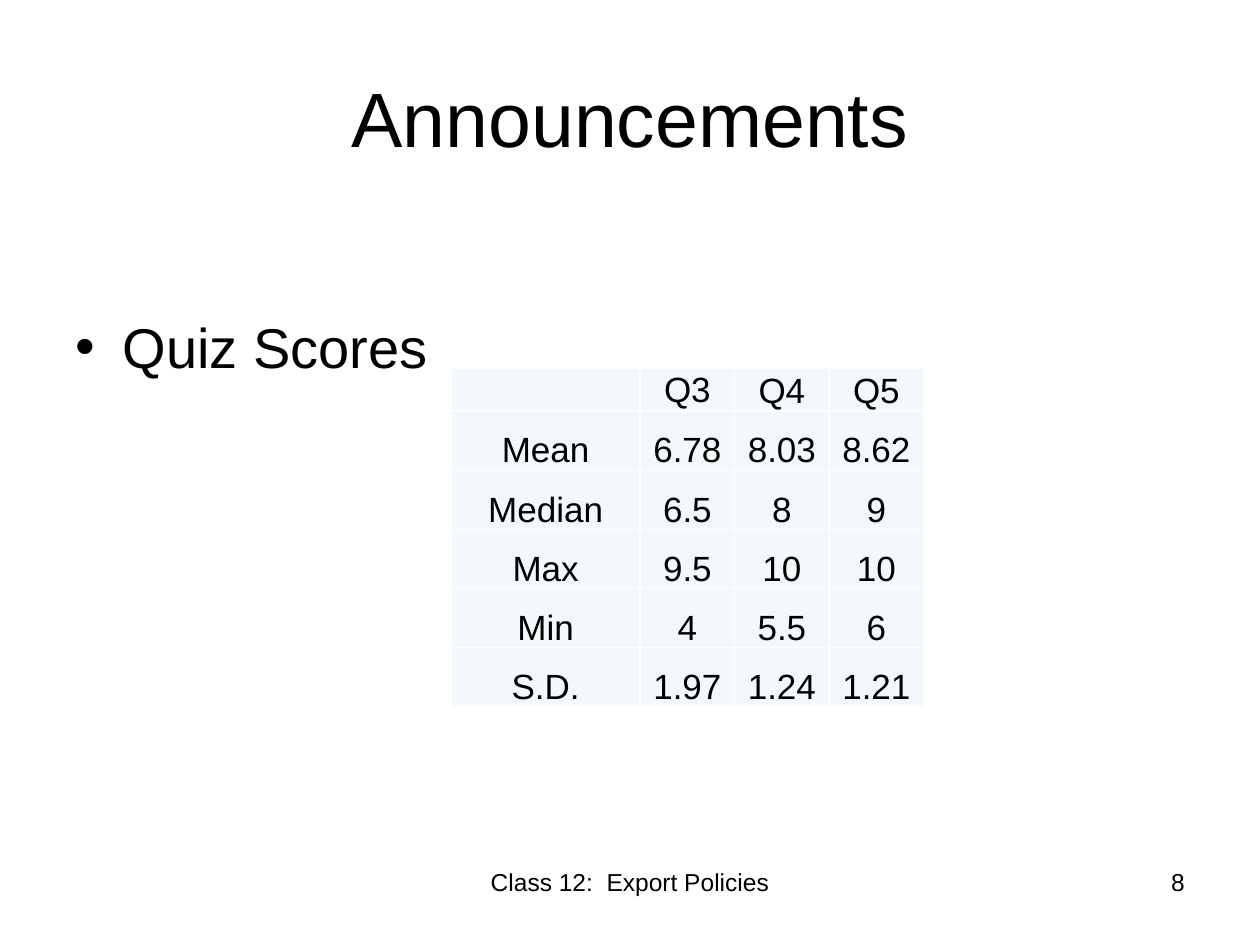
from dataclasses import dataclass

from lxml.etree import SubElement
from pptx import Presentation
from pptx.dml.color import RGBColor
from pptx.enum.text import MSO_ANCHOR as ANCHOR, PP_ALIGN as ALIGN
from pptx.oxml.ns import qn
from pptx.util import Pt

BLACK = RGBColor(0x00, 0x00, 0x00)
WHITE = RGBColor(0xFF, 0xFF, 0xFF)
CELL_FILL = RGBColor(0xF3, 0xF9, 0xFA)
FONT = "Arial"
CELL_SIZE = 20
CELL_MARGINS = {"margin_left": Pt(0.72), "margin_right": Pt(0.72),
                "margin_top": Pt(0.72), "margin_bottom": Pt(0)}

SCORES = [
    ("", "Q3", "Q4", "Q5"),
    ("Mean", "6.78", "8.03", "8.62"),
    ("Median", "6.5", "8", "9"),
    ("Max", "9.5", "10", "10"),
    ("Min", "4", "5.5", "6"),
    ("S.D.", "1.97", "1.24", "1.21"),
]
COL_WIDTHS = [108, 54, 54, 54]
ROW_HEIGHTS = [23.8] + [33.8] * 5


@dataclass
class TextItem:
    text: str
    left: float
    top: float
    width: float
    height: float
    size: float
    align: ALIGN
    anchor: ANCHOR = ANCHOR.TOP
    top_inset: float = 3.6
    bullet: bool = False


TITLE = TextItem("Announcements", 36, 21.6, 648, 90, 44, ALIGN.CENTER, ANCHOR.MIDDLE)
TEXTS = [
    TextItem("Quiz Scores", 36, 126, 648, 356.4, 32, ALIGN.LEFT,
             top_inset=52.4, bullet=True),
    TextItem("Class 12:  Export Policies", 246, 492, 228, 37.5, 14, ALIGN.CENTER),
    TextItem("8", 516, 492, 168, 37.5, 14, ALIGN.RIGHT),
]


def set_all(obj, values: dict) -> None:
    for name, value in values.items():
        setattr(obj, name, value)


def write(tf, text: str, size: float, align: ALIGN):
    p = tf.paragraphs[0]
    p.alignment = align
    r = p.add_run()
    r.text = text
    set_all(r.font, {"name": FONT, "size": Pt(size)})
    r.font.color.rgb = BLACK
    return p


def add_bullet(p, indent: float) -> None:
    pPr = p._p.get_or_add_pPr()
    pPr.set("marL", str(Pt(indent)))
    pPr.set("indent", str(-Pt(indent)))
    SubElement(pPr, qn("a:buFont"), typeface=FONT)
    SubElement(pPr, qn("a:buChar"), char="•")


def fill_text(sp, item: TextItem) -> None:
    set_all(sp, {"left": Pt(item.left), "top": Pt(item.top),
                 "width": Pt(item.width), "height": Pt(item.height)})
    tf = sp.text_frame
    set_all(tf, {"word_wrap": True, "vertical_anchor": item.anchor,
                 "margin_top": Pt(item.top_inset)})
    p = write(tf, item.text, item.size, item.align)
    if item.bullet:
        add_bullet(p, 27)


def add_borders(cell) -> None:
    tcPr = cell._tc.get_or_add_tcPr()
    for i, side in enumerate(("a:lnL", "a:lnR", "a:lnT", "a:lnB")):
        ln = tcPr.makeelement(qn(side), {"w": str(Pt(1))})
        fill = SubElement(ln, qn("a:solidFill"))
        SubElement(fill, qn("a:srgbClr"), val=str(WHITE))
        tcPr.insert(i, ln)  # borders come before the fill


def fill_cell(cell, text: str, anchor: ANCHOR) -> None:
    set_all(cell, {**CELL_MARGINS, "vertical_anchor": anchor})
    cell.fill.solid()
    cell.fill.fore_color.rgb = CELL_FILL
    add_borders(cell)
    if text:
        write(cell.text_frame, text, CELL_SIZE, ALIGN.CENTER)
    else:  # keeps the empty cell from stretching its row
        SubElement(cell.text_frame.paragraphs[0]._p, qn("a:endParaRPr"),
                   sz=str(CELL_SIZE * 100))


def add_scores(s, left: float, top: float) -> None:
    table = s.shapes.add_table(len(SCORES), len(COL_WIDTHS), Pt(left), Pt(top),
                               Pt(sum(COL_WIDTHS)), Pt(sum(ROW_HEIGHTS))).table
    set_all(table, {"first_row": False, "horz_banding": False})
    for col, width in zip(table.columns, COL_WIDTHS):
        col.width = Pt(width)
    for i, (row, height) in enumerate(zip(table.rows, ROW_HEIGHTS)):
        row.height = Pt(height)
        for j, text in enumerate(SCORES[i]):
            anchor = ANCHOR.MIDDLE if (i, j) == (0, 1) else ANCHOR.BOTTOM
            fill_cell(table.cell(i, j), text, anchor)


def main() -> None:
    prs = Presentation()
    prs.slide_width, prs.slide_height = Pt(720), Pt(540)
    s = prs.slides.add_slide(prs.slide_layouts[5])

    # Title
    fill_text(s.shapes.title, TITLE)

    # Bullet, footer and page number
    for item in TEXTS:
        fill_text(s.shapes.add_textbox(0, 0, 0, 0), item)

    # Quiz statistics
    add_scores(s, 257.8, 210.2)

    prs.save("out.pptx")


if __name__ == "__main__":
    main()
